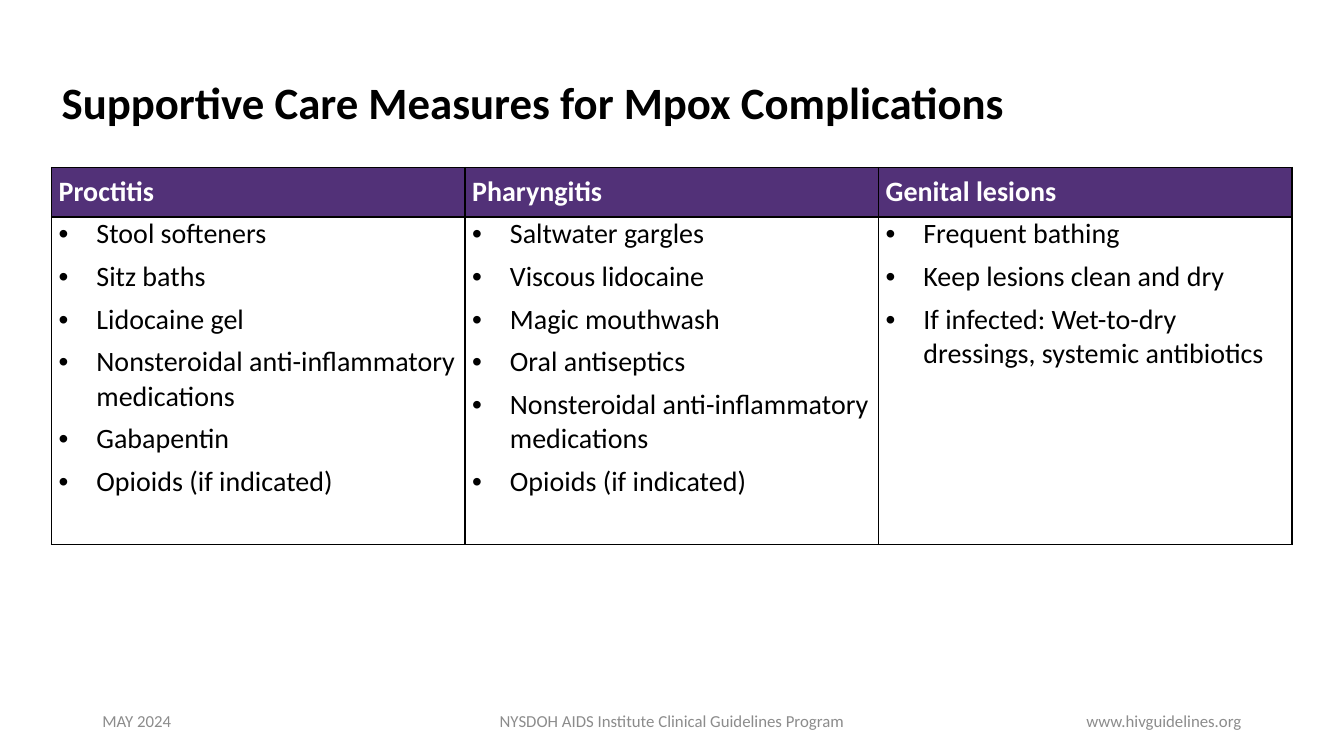
"""Build the slide on supportive care for mpox complications."""
from lxml import etree
from pptx import Presentation
from pptx.dml.color import RGBColor
from pptx.enum.text import MSO_ANCHOR, PP_ALIGN
from pptx.oxml.ns import qn
from pptx.util import Cm, Pt

MID, TOP = MSO_ANCHOR.MIDDLE, MSO_ANCHOR.TOP
LEFT, CENTER, RIGHT = PP_ALIGN.LEFT, PP_ALIGN.CENTER, PP_ALIGN.RIGHT
BLACK, WHITE, GRAY, PURPLE = "000000", "FFFFFF", "8C8C8C", "523178"

TITLE = "Supportive Care Measures for Mpox Complications"
CARE = {
    "Proctitis": [
        "Stool softeners",
        "Sitz baths",
        "Lidocaine gel",
        "Nonsteroidal anti-inflammatory medications",
        "Gabapentin",
        "Opioids (if indicated)",
    ],
    "Pharyngitis": [
        "Saltwater gargles",
        "Viscous lidocaine",
        "Magic mouthwash",
        "Oral antiseptics",
        "Nonsteroidal anti-inflammatory medications",
        "Opioids (if indicated)",
    ],
    "Genital lesions": [
        "Frequent bathing",
        "Keep lesions clean and dry",
        "If infected: Wet-to-dry dressings, systemic antibiotics",
    ],
}
FOOTER = [
    ("MAY 2024", 2.33, 7.62, LEFT),
    ("NYSDOH AIDS Institute Clinical Guidelines Program", 11.22, 11.43, CENTER),
    ("www.hivguidelines.org", 23.92, 7.62, RIGHT),
]
EDGE, COL_W, ROW_H = 1.3, 10.42, (1.25, 8.25)


def style(para, size, color, bold=False):
    font = para.font
    font.name, font.size, font.bold = "Calibri", Pt(size), bold
    font.color.rgb = RGBColor.from_string(color)


def bullet(para):
    props = para._p.get_or_add_pPr()
    props.set("marL", str(Cm(0.95)))
    props.set("indent", str(-Cm(0.95)))
    etree.SubElement(props, qn("a:buFont"), typeface="Arial")
    etree.SubElement(props, qn("a:buChar"), char="•")


def border(cell):
    props = cell._tc.get_or_add_tcPr()
    for side in "LRTB":
        line = etree.SubElement(props, qn(f"a:ln{side}"), w=str(Pt(1)))
        fill = etree.SubElement(line, qn("a:solidFill"))
        etree.SubElement(fill, qn("a:srgbClr"), val=BLACK)


def fill_cell(cell, lines, head):
    border(cell)
    cell.margin_left = cell.margin_right = Cm(0.18)
    cell.margin_top = cell.margin_bottom = 0
    cell.vertical_anchor = MID if head else TOP
    if head:
        cell.fill.solid()
        cell.fill.fore_color.rgb = RGBColor.from_string(PURPLE)
    else:
        cell.fill.background()
    cell.text = "\n".join(lines)
    for i, para in enumerate(cell.text_frame.paragraphs):
        para.space_before = Pt(3 if i else 0)
        para.space_after = Pt(3)
        if not head:
            bullet(para)
        style(para, 20, WHITE if head else BLACK, head)


def add_title(slide):
    title = slide.shapes.title
    title.left, title.top = Cm(EDGE), Cm(1.35)
    title.width, title.height = Cm(27.23), Cm(2.59)
    frame = title.text_frame
    frame.text = TITLE
    frame.vertical_anchor = MID
    para = frame.paragraphs[0]
    para.alignment, para.line_spacing = LEFT, 0.9
    style(para, 32, BLACK, True)


def add_care(slide):
    count = len(CARE)
    table = slide.shapes.add_table(2, count, Cm(EDGE), Cm(4.22),
                                   Cm(COL_W * count), Cm(sum(ROW_H))).table
    table.horz_banding = False
    for row, high in zip(table.rows, ROW_H):
        row.height = Cm(high)
    for i, (name, steps) in enumerate(CARE.items()):
        table.columns[i].width = Cm(COL_W)
        fill_cell(table.cell(0, i), [name], True)
        fill_cell(table.cell(1, i), steps, False)


def add_footer(slide):
    for text, left, width, align in FOOTER:
        box = slide.shapes.add_textbox(Cm(left), Cm(17.65), Cm(width), Cm(1.02))
        frame = box.text_frame
        frame.word_wrap = True
        frame.vertical_anchor = MID
        frame.text = text
        para = frame.paragraphs[0]
        para.alignment = align
        style(para, 12, GRAY)


def main():
    deck = Presentation()
    deck.slide_width, deck.slide_height = Cm(33.87), Cm(19.05)
    slide = deck.slides.add_slide(deck.slide_layouts[5])
    add_title(slide)
    add_care(slide)
    add_footer(slide)
    deck.save("out.pptx")


if __name__ == "__main__":
    main()
